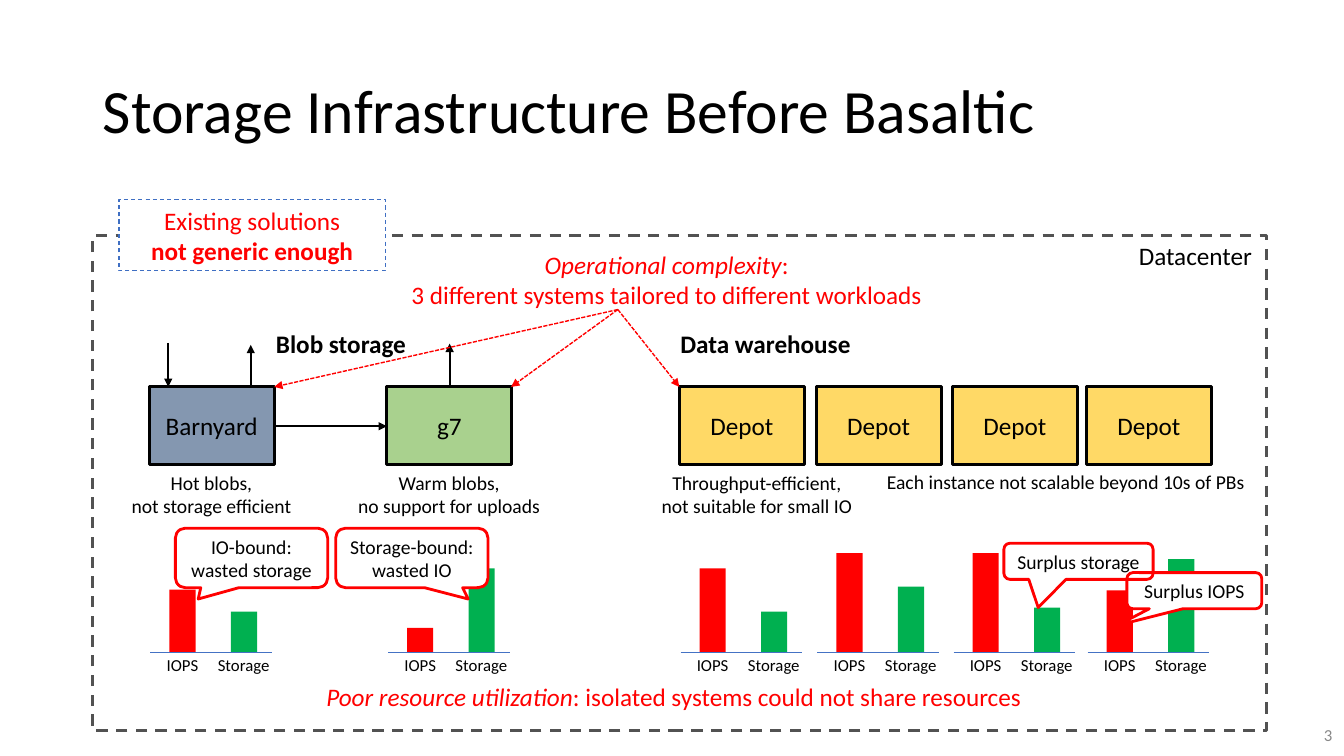
"""Build the slide on storage infrastructure with separate blob and warehouse systems."""
import pptx
import pptx.util
import pptx.dml.color
import pptx.enum.dml
import pptx.enum.shapes
import pptx.enum.text
import pptx.oxml.ns
import lxml.etree

Cm, Pt = pptx.util.Cm, pptx.util.Pt
RGBColor = pptx.dml.color.RGBColor
SHAPE = pptx.enum.shapes.MSO_SHAPE
DASH = pptx.enum.dml.MSO_LINE
ALIGN = pptx.enum.text.PP_ALIGN
ANCHOR = pptx.enum.text.MSO_ANCHOR
qn = pptx.oxml.ns.qn

BLACK = RGBColor(0x00, 0x00, 0x00)
WHITE = RGBColor(0xFF, 0xFF, 0xFF)
RED = RGBColor(0xFF, 0x00, 0x00)
GREEN = RGBColor(0x00, 0xB0, 0x50)
BLUE = RGBColor(0x44, 0x72, 0xC4)
NOTE_BLUE = RGBColor(0x3F, 0x6F, 0xC3)
SLATE = RGBColor(0x84, 0x97, 0xB0)
LEAF = RGBColor(0xA9, 0xD1, 0x8E)
GOLD = RGBColor(0xFF, 0xD9, 0x66)
FRAME_GRAY = RGBColor(0x52, 0x52, 0x52)
NUMBER_GRAY = RGBColor(0x88, 0x88, 0x88)

BOX_TOP, BOX_W, BOX_H = 9.75, 3.15, 1.96
BASELINE, BAR_W = 16.43, 0.66


def write(s, lines, size, color=BLACK, align=ALIGN.CENTER, anchor=ANCHOR.TOP):
    """Fill a shape with paragraphs of (text, style) runs; style holds b or i."""
    tf = s.text_frame
    tf.word_wrap = True
    tf.auto_size = pptx.enum.text.MSO_AUTO_SIZE.NONE
    tf.vertical_anchor = anchor
    for i, runs in enumerate(lines):
        p = tf.paragraphs[0] if i == 0 else tf.add_paragraph()
        p.alignment = align
        for text, style in runs:
            r = p.add_run()
            r.text = text
            r.font.name = "Calibri"
            r.font.size = Pt(size)
            r.font.color.rgb = color
            r.font.bold = "b" in style
            r.font.italic = "i" in style


def add_box(kind, x, y, w, h, fill=None, line=None, width=2):
    """Add a flat preset shape with optional fill and outline."""
    s = shapes.add_shape(kind, Cm(x), Cm(y), Cm(w), Cm(h))
    s.shadow.inherit = False
    if fill is None:
        s.fill.background()
    else:
        s.fill.solid()
        s.fill.fore_color.rgb = fill
    if line is None:
        s.line.fill.background()
    else:
        s.line.color.rgb = line
        s.line.width = Pt(width)
    return s


prs = pptx.Presentation()
prs.slide_width, prs.slide_height = Cm(33.87), Cm(19.05)
slide = prs.slides.add_slide(prs.slide_layouts[5])
shapes = slide.shapes

title = shapes.title
title.left, title.top, title.width, title.height = Cm(2.34), Cm(1.02), Cm(29.21), Cm(3.68)
write(title, [[("Storage Infrastructure Before Basaltic", "")]], 44,
      align=ALIGN.LEFT, anchor=ANCHOR.MIDDLE)
title.text_frame.paragraphs[0].line_spacing = 0.9

frame = add_box(SHAPE.RECTANGLE, 2.34, 5.94, 29.57, 12.47, line=FRAME_GRAY)
frame.line.dash_style = DASH.DASH
note = add_box(SHAPE.RECTANGLE, 3, 5.03, 6.71, 1.8, WHITE, NOTE_BLUE, 0.75)
note.line.dash_style = DASH.DASH
write(note, [[("Existing solutions", "")], [("not generic enough", "b")]], 18, RED,
      anchor=ANCHOR.MIDDLE)

lines = []
systems = [
    ("Barnyard", 3.76, SLATE, 1.57, 1.02),
    ("g7", 9.75, LEAF, 0.61, 2.11),
    ("Depot", 17.12, GOLD, 2.11, 1.02),
    ("Depot", 20.57, GOLD, 2.49, 1.65),
    ("Depot", 24, GOLD, 2.49, 1.12),
    ("Depot", 27.38, GOLD, 1.55, 2.34),
]
for name, x, fill, iops, storage in systems:
    s = add_box(SHAPE.RECTANGLE, x, BOX_TOP, BOX_W, BOX_H, fill, BLACK)
    write(s, [[(name, "")]], 18, anchor=ANCHOR.MIDDLE)
    left = x + 0.03
    lines.append((left, BASELINE, left + 3.07, BASELINE, BLUE, 0.75, False))
    bars = [("IOPS", iops, RED, 0.48, 0.16, 1.35),
            ("Storage", storage, GREEN, 2.03, 1.45, 1.86)]
    for label, height, color, bar_dx, label_dx, label_w in bars:
        add_box(SHAPE.RECTANGLE, left + bar_dx, BASELINE - height, BAR_W, height, color)
        s = shapes.add_textbox(Cm(left + label_dx), Cm(16.38), Cm(label_w), Cm(0.94))
        write(s, [[(label, "")]], 12, align=ALIGN.LEFT)

texts = [
    (28.45, 5.94, 3.4, 1.02, 18, BLACK, ALIGN.LEFT, [[("Datacenter", "")]]),
    (6.5, 8.15, 4.19, 1.02, 18, BLACK, ALIGN.CENTER, [[("Blob storage", "b")]]),
    (16.51, 8.15, 5.56, 1.02, 18, BLACK, ALIGN.CENTER, [[("Data warehouse", "b")]]),
    (3.02, 11.73, 4.62, 1.45, 14, BLACK, ALIGN.CENTER,
     [[("Hot blobs,", "")], [("not storage efficient", "")]]),
    (8.74, 11.73, 5.16, 1.45, 14, BLACK, ALIGN.CENTER,
     [[("Warm blobs,", "")], [("no support for uploads", "")]]),
    (16.33, 11.73, 5.49, 1.45, 14, BLACK, ALIGN.CENTER,
     [[("Throughput-efficient,", "")], [("not suitable for small IO", "")]]),
    (22.1, 11.71, 9.86, 0.86, 14, BLACK, ALIGN.LEFT,
     [[("Each instance not scalable beyond 10s of PBs", "")]]),
    (9.42, 6.15, 14.76, 1.8, 18, RED, ALIGN.CENTER,
     [[("Operational complexity", "i"), (":", "")],
      [("3 different systems tailored to different workloads", "")]]),
    (7.52, 17.04, 18.92, 1.02, 18, RED, ALIGN.CENTER,
     [[("Poor resource utilization", "i"),
       (": isolated systems could not share resources", "")]]),
    (26.21, 18.01, 7.62, 1.02, 12, NUMBER_GRAY, ALIGN.RIGHT, [[("3", "")]]),
]
for x, y, w, h, size, color, align, content in texts:
    s = shapes.add_textbox(Cm(x), Cm(y), Cm(w), Cm(h))
    anchor = ANCHOR.MIDDLE if color == NUMBER_GRAY else ANCHOR.TOP
    write(s, content, size, color, align, anchor)

lines += [
    (6.91, 10.74, 9.75, 10.74, BLACK, 1.5, True),
    (4.24, 8.64, 4.24, BOX_TOP, BLACK, 1.5, True),
    (6.32, BOX_TOP, 6.32, 8.69, BLACK, 1.5, True),
    (11.33, BOX_TOP, 11.33, 8.66, BLACK, 1.5, True),
    (15.57, 7.8, 6.91, BOX_TOP, RED, 1, True),
    (15.57, 7.8, 12.88, BOX_TOP, RED, 1, True),
    (15.57, 7.8, 17.12, BOX_TOP, RED, 1, True),
]
for x1, y1, x2, y2, color, width, arrow in lines:
    s = shapes.add_connector(pptx.enum.shapes.MSO_CONNECTOR.STRAIGHT,
                             Cm(x1), Cm(y1), Cm(x2), Cm(y2))
    s.line.color.rgb = color
    s.line.width = Pt(width)
    if color == RED:
        s.line.dash_style = DASH.SQUARE_DOT
    if arrow:
        lxml.etree.SubElement(s.line._get_or_add_ln(), qn("a:tailEnd"), type="triangle")
    lxml.etree.SubElement(s._element.spPr, qn("a:effectLst"))

callouts = [
    (8.46, 13.31, 3.84, 1.5, 0.37, 0.69, WHITE, ["Storage-bound:", "wasted IO"]),
    (4.42, 13.31, 3.84, 1.5, -0.35, 0.69, WHITE, ["IO-bound:", "wasted storage"]),
    (28.4, 14.43, 3.4, 0.91, -0.57, 0.96, WHITE, ["Surplus IOPS"]),
    (25.3, 13.69, 3.76, 0.91, -0.27, 1.28, None, ["Surplus storage"]),
]
for x, y, w, h, tip_x, tip_y, fill, content in callouts:
    s = add_box(SHAPE.ROUNDED_RECTANGULAR_CALLOUT, x, y, w, h, fill, RED)
    s.adjustments[0], s.adjustments[1] = tip_x, tip_y
    write(s, [[(text, "")] for text in content], 14, anchor=ANCHOR.MIDDLE)

prs.save("out.pptx")
